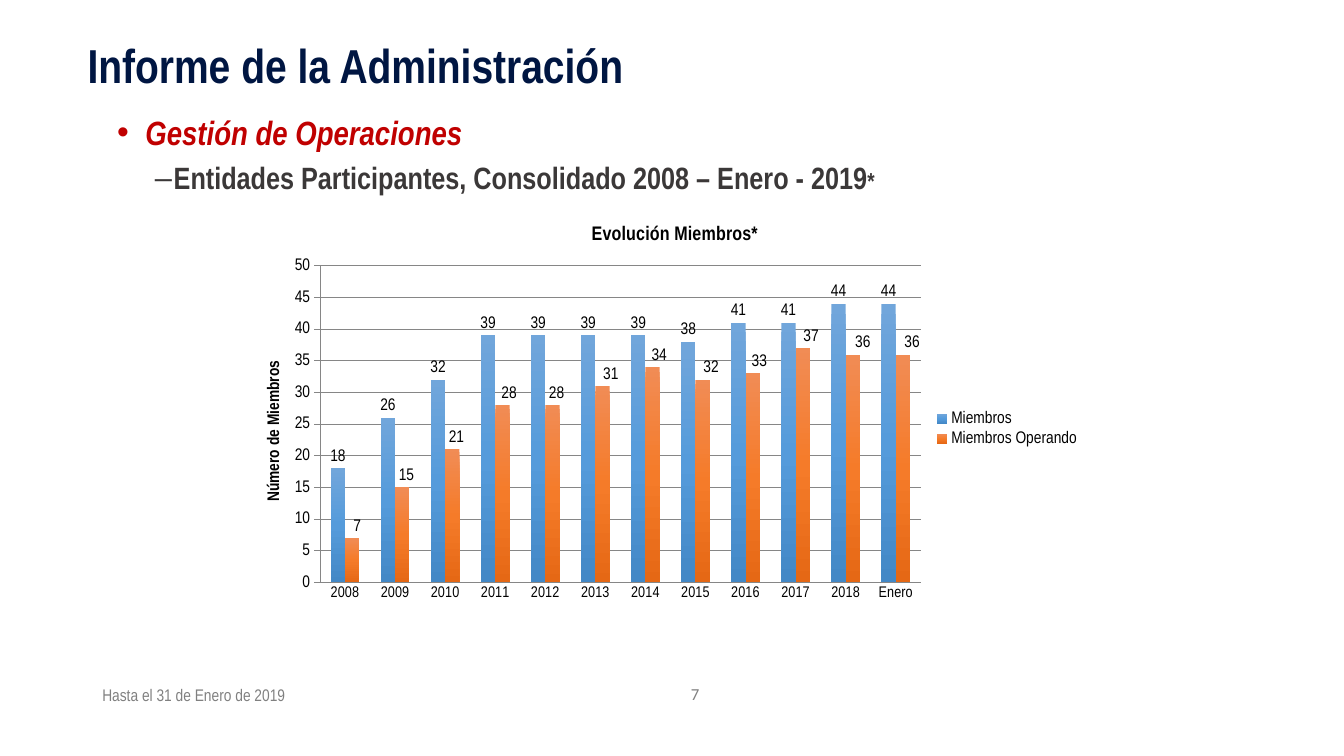
from copy import deepcopy

from lxml import etree
from pptx import Presentation
from pptx import util as u
from pptx.chart import data as chart_data
from pptx.dml import color
from pptx.enum import chart as ch, text
from pptx.oxml import ns

THEME = {
    "narrow": "Arial Narrow", "plain": "Calibri",
    "navy": "001642", "red": "C00000", "dark": "3B3838",
    "muted": "808080", "rule": "868686", "black": "000000",
    "title": 34, "topic": 24, "subtopic": 22, "asterisk": 16.5,
    "chart_title": 14, "chart": 12, "category": 11, "small": 12,
    "members": ("71A6DB", "559BDB", "4388C6"),
    "operating": ("F18C55", "F57B29", "E56815"),
}
PX = 9525  # EMU per px, 96 px to the inch


def add_text(place, paragraphs, anchor=text.MSO_ANCHOR.TOP, align=text.PP_ALIGN.LEFT):
    """Each paragraph: (runs, line spacing, bullet); bullet: (mark, indent, hang, space before)."""
    frame = slide.shapes.add_textbox(*(n * PX for n in place)).text_frame
    frame.word_wrap = True
    frame.vertical_anchor = anchor
    for i, (runs, spacing, bullet) in enumerate(paragraphs):
        para = frame.add_paragraph() if i else frame.paragraphs[0]
        para.alignment = align
        if bullet:
            mark, indent, hang, before = bullet
            para.level = i
            props = para._p.get_or_add_pPr()
            props.set("marL", str(indent * PX))
            props.set("indent", str(-hang * PX))
            etree.SubElement(props, ns.qn("a:buFont")).set("typeface", "Arial")
            etree.SubElement(props, ns.qn("a:buChar")).set("char", mark)
            para.space_before = u.Pt(before)
        para.line_spacing = spacing
        for words, size, rgb, face, bold, italic in runs:
            run = para.add_run()
            run.text = words
            run.font.size = u.Pt(size)
            run.font.name = face
            run.font.color.rgb = color.RGBColor.from_string(rgb)
            run.font.bold, run.font.italic = bold, italic


def set_layout(parent, previous, **values):
    """Give a chart part a manual layout, placed after its child named previous."""
    for old in parent.findall(ns.qn("c:layout")):
        parent.remove(old)
    layout = etree.Element(ns.qn("c:layout"))
    manual = etree.SubElement(layout, ns.qn("c:manualLayout"))
    for key, value in values.items():
        etree.SubElement(manual, ns.qn("c:" + key)).set("val", str(value))
    if previous:
        parent.find(ns.qn(previous)).addnext(layout)
    else:
        parent.insert(0, layout)


prs = Presentation()
prs.slide_width, prs.slide_height = 1280 * PX, 720 * PX
slide = prs.slides.add_slide(prs.slide_layouts[6])
narrow = THEME["narrow"]

# Heading
add_text((74, 36, 1104, 74), [
    ([("Informe de la Administración", THEME["title"], THEME["navy"], narrow, True, False)], 0.9, None)])

# Topic and subtopic
add_text((102, 106, 1062, 516), [
    ([("Gestión de Operaciones", THEME["topic"], THEME["red"], narrow, True, True)],
     0.9, ("•", 27, 27, 0)),
    ([("Entidades Participantes, Consolidado 2008 – Enero - 2019",
       THEME["subtopic"], THEME["dark"], narrow, True, False),
      ("*", THEME["asterisk"], THEME["dark"], narrow, True, False)],
     0.9, ("–", 54, 18, 7.5)),
])

# Page number and footer
add_text((518, 642, 288, 38), [([("7", THEME["small"], THEME["muted"], THEME["plain"], False, False)], 1.0, None)],
         text.MSO_ANCHOR.MIDDLE, text.PP_ALIGN.CENTER)
add_text((88, 643, 288, 38), [
    ([("Hasta el 31 de Enero de 2019", THEME["small"], THEME["muted"], narrow, False, False)], 1.0, None)],
    text.MSO_ANCHOR.MIDDLE)

# Members chart
members = chart_data.CategoryChartData(number_format="0")
members.categories = [str(year) for year in range(2008, 2019)] + ["Enero"]
members.add_series("Miembros", (18, 26, 32, 39, 39, 39, 39, 38, 41, 41, 44, 44))
members.add_series("Miembros Operando", (7, 15, 21, 28, 28, 31, 34, 32, 33, 37, 36, 36))
chart = slide.shapes.add_chart(
    ch.XL_CHART_TYPE.COLUMN_CLUSTERED, *(n * PX for n in (241, 197, 798, 423)), members).chart
chart.font.name = narrow
chart.font.size = u.Pt(THEME["chart"])
chart.font.color.rgb = color.RGBColor.from_string(THEME["black"])

# Chart title and value axis title
chart.has_title = True
years, counts = chart.category_axis, chart.value_axis
for title, words, size, x, y in (
        (chart.chart_title, "Evolución Miembros*", THEME["chart_title"], 0.4, 0.03),
        (counts.axis_title, "Número de Miembros", THEME["chart"], 0.01, 0.34)):
    run = title.text_frame.paragraphs[0].add_run()
    run.text = words
    run.font.name = narrow
    run.font.size = u.Pt(size)
    run.font.bold = True
    run.font.color.rgb = color.RGBColor.from_string(THEME["black"])
    set_layout(title._element, "c:tx", xMode="edge", yMode="edge", x=x, y=y)

# Axes
counts.minimum_scale, counts.maximum_scale, counts.major_unit = 0, 50, 5
counts.has_major_gridlines = True
counts.major_tick_mark = ch.XL_TICK_MARK.OUTSIDE
years.major_tick_mark = ch.XL_TICK_MARK.NONE
years.tick_labels.font.size = u.Pt(THEME["category"])
for ruled in (years, counts, counts.major_gridlines):
    ruled.format.line.width = u.Pt(0.75)
    ruled.format.line.color.rgb = color.RGBColor.from_string(THEME["rule"])

# Plot area and legend
set_layout(chart._chartSpace.chart.plotArea, None, layoutTarget="inner", xMode="edge", yMode="edge",
           x=0.08, y=0.133, w=0.717, h=0.713)
chart.has_legend = True
chart.legend.position = ch.XL_LEGEND_POSITION.RIGHT
chart.legend.include_in_layout = False
set_layout(chart.legend._element, "c:legendPos", xMode="edge", yMode="edge", x=0.81, y=0.45, w=0.18, h=0.1)

# Columns, shaded from top to bottom, with their values
plot = chart.plots[0]
plot.gap_width, plot.overlap, plot.vary_by_categories = 150, 0, False
for column, shades in zip(plot.series, (THEME["members"], THEME["operating"])):
    fill = column.format.fill
    fill.gradient()
    fill.gradient_angle = 270
    first_stop = column._element.find(".//" + ns.qn("a:gs"))
    first_stop.addnext(deepcopy(first_stop))
    for stop, shade, position in zip(fill.gradient_stops, shades, (0, 0.5, 1)):
        stop.color.rgb = color.RGBColor.from_string(shade)
        stop.position = position
    column.data_labels.show_value = True
    column.data_labels.position = ch.XL_LABEL_POSITION.OUTSIDE_END

# Values of the operating members sit a little to the right
operating = plot.series[1]
for i, shift in enumerate((5, 4, 4, 7, 4, 8, 7, 8, 7, 8, 10, 9)):
    operating.points[i].data_label.position = ch.XL_LABEL_POSITION.OUTSIDE_END
    label = operating._element.findall(".//" + ns.qn("c:dLbl"))[i]
    set_layout(label, "c:idx", x=round(shift / 838, 3), y=0)

prs.save("out.pptx")
